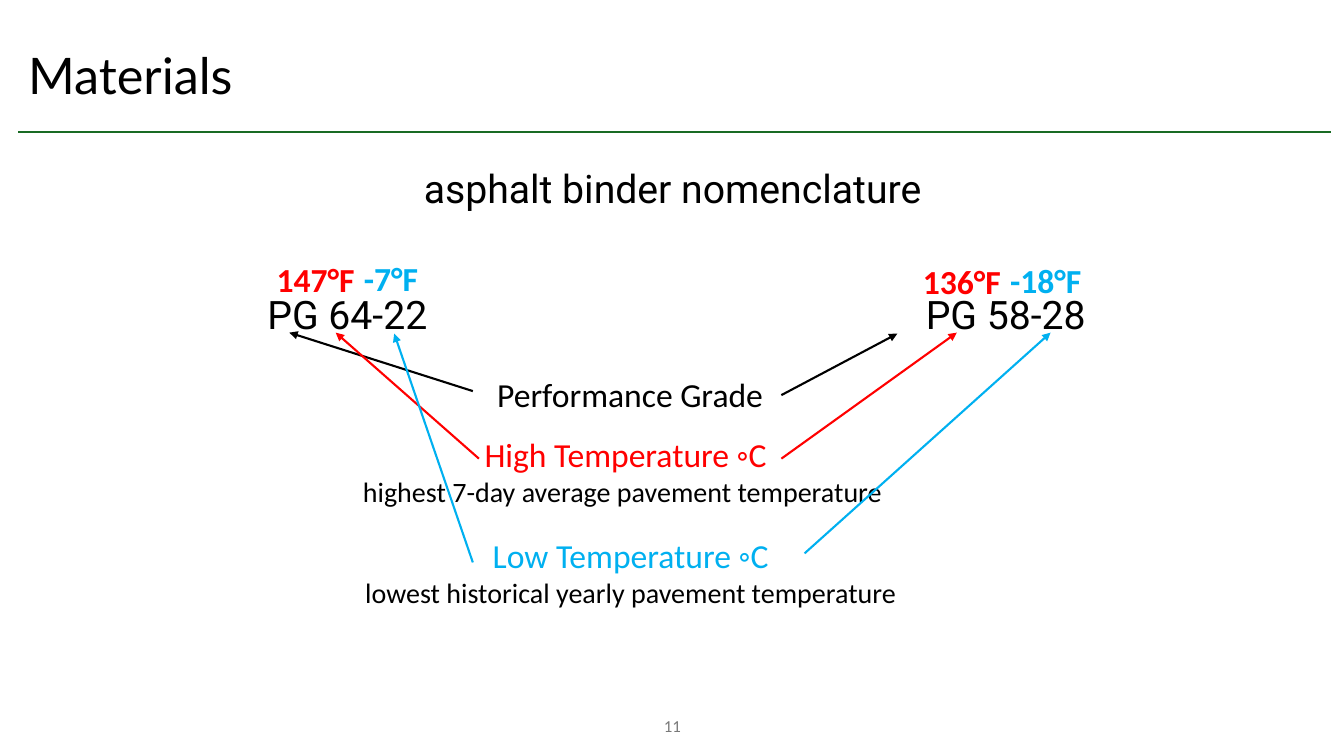
import pptx
import pptx.util
import pptx.dml.color
import pptx.enum.text
import pptx.enum.shapes
import pptx.oxml.ns
import lxml.etree

PX = 9144
theme = {
    "black": "000000", "red": "FF0000", "blue": "00B0F0", "green": "196B24", "gray": "797979",
    "title": 36, "head": 28, "label": 24, "note": 20, "foot": 12, "line": 1.5,
}
ALIGN = pptx.enum.text.PP_ALIGN
ANCHOR = pptx.enum.text.MSO_ANCHOR
qn = pptx.oxml.ns.qn

deck = pptx.Presentation()
deck.slide_width = 1333 * PX
deck.slide_height = 750 * PX
slide = deck.slides.add_slide(deck.slide_layouts[6])


def write(area, rows, face="Calibri", align=ALIGN.CENTER, anchor=ANCHOR.TOP, space=1.0, wrap=True, bold=False):
    frame = slide.shapes.add_textbox(*[n * PX for n in area]).text_frame
    frame.word_wrap = wrap
    frame.vertical_anchor = anchor
    frame.text = "\n".join(row[0] for row in rows)
    for para, (text, size, color) in zip(frame.paragraphs, rows):
        para.alignment = align
        para.line_spacing = space
        font = para.runs[0].font
        font.name = face
        font.size = pptx.util.Pt(theme[size])
        font.bold = bold
        font.color.rgb = pptx.dml.color.RGBColor.from_string(theme[color])


def draw(start, end, color, arrow=True):
    ends = [n * PX for n in start + end]
    link = slide.shapes.add_connector(pptx.enum.shapes.MSO_CONNECTOR.STRAIGHT, *ends)
    link.line.width = pptx.util.Pt(theme["line"])
    link.line.color.rgb = pptx.dml.color.RGBColor.from_string(theme[color])
    if arrow:
        lxml.etree.SubElement(link.line._get_or_add_ln(), qn("a:tailEnd"), type="triangle")
    lxml.etree.SubElement(link._element.spPr, qn("a:effectLst"))


draw((18, 131), (1320, 131), "green", arrow=False)
write((18, 40, 1302, 76), [("Materials", "title", "black")], "Lato", ALIGN.LEFT, ANCHOR.MIDDLE, 0.9)

heads = [
    ("PG 64-22", (24, 288, 641, 64)),
    ("PG 58-28", (675, 288, 645, 64)),
    ("asphalt binder nomenclature", (16, 163, 1302, 76)),
]
for text, area in heads:
    write(area, [(text, "head", "black")], "Roboto", space=0.9)

write((517, 700, 300, 40), [("11", "foot", "gray")], anchor=ANCHOR.MIDDLE)

write((475, 366, 300, 50), [("Performance Grade", "label", "black")])
notes = [
    ("High Temperature ◦C", "highest 7-day average pavement temperature ", "red", (346, 426, 549, 84)),
    ("Low Temperature ◦C", "lowest historical yearly pavement temperature", "blue", (345, 526, 561, 84)),
]
for label, note, color, area in notes:
    write(area, [(label, "label", color), (note, "note", "black")], wrap=False)

arrows = [
    ("black", (469, 388), (287, 330), (775, 392), (890, 331)),
    ("red", (475, 455), (333, 330), (775, 455), (949, 330)),
    ("blue", (469, 558), (391, 331), (798, 549), (1042, 330)),
]
for color, left, left_tip, right, right_tip in arrows:
    draw(left, left_tip, color)
    draw(right, right_tip, color)

temps = [
    ("147°F", "red", (264, 252, 98, 50), ALIGN.CENTER),
    ("-7°F", "blue", (351, 251, 75, 50), ALIGN.LEFT),
    ("136°F", "red", (905, 254, 98, 50), ALIGN.CENTER),
    ("-18°F", "blue", (992, 253, 92, 50), ALIGN.LEFT),
]
for text, color, area, align in temps:
    write(area, [(text, "label", color)], align=align, wrap=align == ALIGN.CENTER, bold=True)

deck.save("out.pptx")
